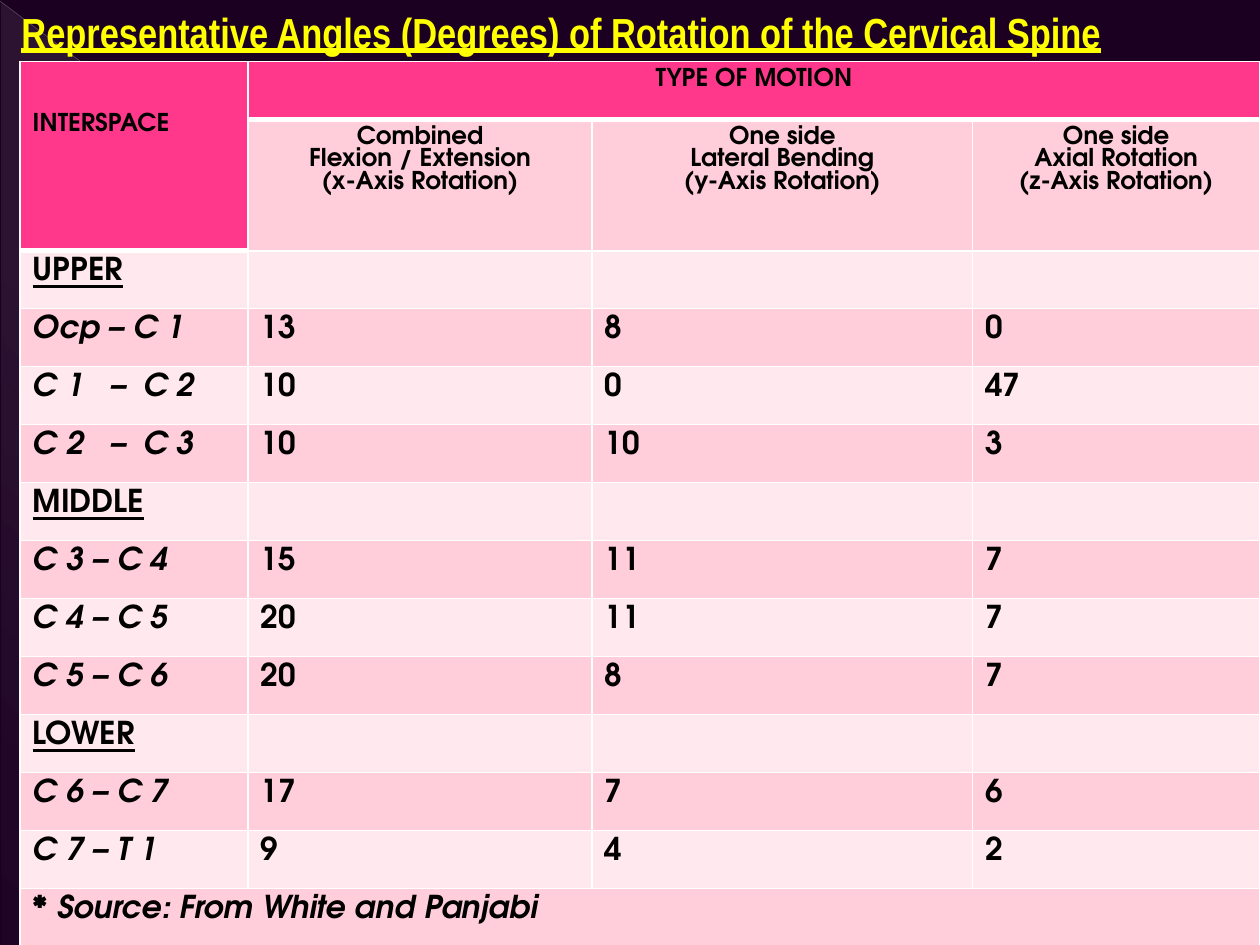
from dataclasses import dataclass

from lxml import etree
from pptx import Presentation
from pptx import util as u
from pptx.dml.color import RGBColor
from pptx.enum import shapes, text
from pptx.oxml import parse_xml
from pptx.oxml.ns import nsdecls, qn


@dataclass(frozen=True)
class Theme:
    background: str = "1C0022"
    title: str = "FFFF00"
    ink: str = "000000"
    header: str = "FF388C"
    bands: tuple = ("FFCEDA", "FFE8EE")
    border: str = "FFFFFF"
    sheen: str = "D2D2D2"
    title_font: str = "Arial Narrow"
    body_font: str = "TeX Gyre Adventor"
    title_size: int = 24
    header_size: int = 14
    body_size: int = 18


CENTER = text.PP_ALIGN.CENTER
COLUMNS = (18.1, 27.3, 30.2, 22.8)  # percent of the slide width
ROW, SUBHEAD_ROW, SOURCE_ROW = 6.14, 13.87, 8.93  # percent of the slide height
SUBHEADS = (
    ("Combined", "Flexion / Extension", "(x-Axis Rotation)"),
    ("One side", "Lateral Bending", "(y-Axis Rotation)"),
    ("One side", "Axial Rotation", "(z-Axis Rotation)"),
)
REGIONS = {
    "UPPER": (("Ocp – C 1", 13, 8, 0), ("C 1 – C 2", 10, 0, 47),
              ("C 2 – C 3", 10, 10, 3)),
    "MIDDLE": (("C 3 – C 4", 15, 11, 7), ("C 4 – C 5", 20, 11, 7),
               ("C 5 – C 6", 20, 8, 7)),
    "LOWER": (("C 6 – C 7", 17, 7, 6), ("C 7 – T 1", 9, 4, 2)),
}
WIDE_LABELS = ("C 1 – C 2", "C 2 – C 3")


def write(p, words, *, size, font, color, bold=True, italic=False,
          underline=False, align=None, tracking=0):
    """Add one formatted run to a paragraph; tracking is in points."""
    r = p.add_run()
    r.text = words
    r.font.size, r.font.name = u.Pt(size), font
    r.font.bold, r.font.italic, r.font.underline = bold, italic, underline
    r.font.color.rgb = RGBColor.from_string(color)
    if tracking:
        r._r.get_or_add_rPr().set("spc", str(tracking * 100))
    if align is not None:
        p.alignment = align


class Deck:
    def __init__(self, theme):
        self.theme = theme
        self.prs = Presentation()
        self.prs.slide_width, self.prs.slide_height = u.Inches(10), u.Inches(7.5)
        self.s = self.prs.slides.add_slide(self.prs.slide_layouts[5])
        fill = self.s.background.fill
        fill.solid()
        fill.fore_color.rgb = RGBColor.from_string(theme.background)

    def x(self, share):
        return round(self.prs.slide_width * share / 100)

    def y(self, share):
        return round(self.prs.slide_height * share / 100)

    def sheen(self, left, top, width, height, stops, angle):
        """Right triangle with a translucent gradient of (position, alpha) stops."""
        sp = self.s.shapes.add_shape(shapes.MSO_SHAPE.RIGHT_TRIANGLE, self.x(left),
                                     self.y(top), self.x(width), self.y(height))
        sp.shadow.inherit = False
        sp.line.fill.background()
        marks = "".join(
            f'<a:gs pos="{pos * 1000}"><a:srgbClr val="{self.theme.sheen}">'
            f'<a:alpha val="{alpha * 1000}"/></a:srgbClr></a:gs>'
            for pos, alpha in stops)
        geometry = sp.element.spPr.find(qn("a:prstGeom"))
        geometry.addnext(parse_xml(
            f'<a:gradFill {nsdecls("a")}><a:gsLst>{marks}</a:gsLst>'
            f'<a:lin ang="{angle * 60000}" scaled="0"/></a:gradFill>'))

    def line(self, x1, y1, x2, y2, color, width, alpha):
        c = self.s.shapes.add_connector(shapes.MSO_CONNECTOR.STRAIGHT, self.x(x1),
                                        self.y(y1), self.x(x2), self.y(y2))
        c.line.width = u.Pt(width)
        c.line.color.rgb = RGBColor.from_string(color)
        spPr = c.element.spPr
        tint = spPr.find(".//" + qn("a:srgbClr"))
        etree.SubElement(tint, qn("a:alpha")).set("val", str(alpha * 1000))
        etree.SubElement(spPr, qn("a:effectLst"))

    def title(self, words, left, top, width, height):
        t = self.theme
        sp = self.s.shapes.title
        sp.left, sp.top = self.x(left), self.y(top)
        sp.width, sp.height = self.x(width), self.y(height)
        tree = sp.element.getparent()
        tree.append(sp.element)  # in front of the backdrop
        tf = sp.text_frame
        tf.word_wrap, tf.auto_size = True, text.MSO_AUTO_SIZE.NONE
        tf.vertical_anchor = text.MSO_ANCHOR.TOP
        tf.margin_left = u.Inches(0.17)
        p = tf.paragraphs[0]
        p.space_before = u.Pt(2)
        write(p, words, size=t.title_size, font=t.title_font, color=t.title,
              underline=True, align=text.PP_ALIGN.LEFT)

    def table(self, left, top, columns, rows):
        frame = self.s.shapes.add_table(len(rows), len(columns), self.x(left),
                                        self.y(top), self.x(sum(columns)),
                                        self.y(sum(rows)))
        table = frame.table
        for column, share in zip(table.columns, columns):
            column.width = self.x(share)
        for row, share in zip(table.rows, rows):
            row.height = self.y(share)
        return table

    def fill_cell(self, cell, color, top=1, bottom=1):
        cell.fill.solid()
        cell.fill.fore_color.rgb = RGBColor.from_string(color)
        tcPr = cell._tc.get_or_add_tcPr()
        sides = {"L": 1, "R": 1, "T": top, "B": bottom}
        for i, (side, width) in enumerate(sides.items()):
            tcPr.insert(i, parse_xml(
                f'<a:ln{side} {nsdecls("a")} w="{u.Pt(width)}"><a:solidFill>'
                f'<a:srgbClr val="{self.theme.border}"/></a:solidFill></a:ln{side}>'))

    def cell_text(self, cell, *lines, **form):
        t = self.theme
        form = dict(size=t.body_size, font=t.body_font, color=t.ink) | form
        tf = cell.text_frame
        for i, words in enumerate(lines):
            p = tf.add_paragraph() if i else tf.paragraphs[0]
            if words in WIDE_LABELS:
                # widen the spaces around the dash
                start, end = words.split(" – ")
                for part, gap in ((start, 0), (" ", 10), ("–", 0), (" ", 5), (end, 0)):
                    write(p, part, tracking=gap, **form)
            else:
                write(p, words, **form)


def main():
    theme = Theme()
    deck = Deck(theme)

    # Backdrop
    deck.sheen(0.1, 0.27, 99.8, 99.73, ((0, 10), (70, 8), (100, 1)), 133)
    deck.line(0, 0.13, 99.9, 99.87, "BFBFBF", 0.39, 35)
    deck.line(100, 72.13, 70.7, 99.87, "C6C6C6", 0.47, 45)

    # Title
    deck.title("Representative Angles (Degrees) of Rotation of the Cervical Spine",
               0, 0, 100, 6.5)

    # Table rows: regions are headings, followed by their interspaces
    body = []
    for region, interspaces in REGIONS.items():
        body += [(region,), *interspaces]
    heights = [ROW, SUBHEAD_ROW] + [ROW] * len(body) + [SOURCE_ROW]
    table = deck.table(1.6, 6.53, COLUMNS, heights)
    last = len(heights) - 1

    # Fills and borders
    for r in range(len(heights)):
        for c in range(len(COLUMNS)):
            is_header = r == 0 or (r == 1 and c == 0)
            color = theme.header if is_header else theme.bands[(r + 1) % 2]
            above_is_header = (r == 1 and c > 0) or (r == 2 and c == 0)
            deck.fill_cell(table.cell(r, c), color, top=3 if above_is_header else 1,
                           bottom=3 if is_header else 1)

    # Header
    table.cell(0, 0).merge(table.cell(1, 0))
    table.cell(0, 1).merge(table.cell(0, 3))
    table.cell(0, 0).margin_top = u.Inches(0.41)
    deck.cell_text(table.cell(0, 0), "INTERSPACE", size=theme.header_size)
    deck.cell_text(table.cell(0, 1), "TYPE OF MOTION", size=theme.header_size,
                   align=CENTER)
    for c, lines in enumerate(SUBHEADS, 1):
        deck.cell_text(table.cell(1, c), *lines, size=theme.header_size, align=CENTER)

    # Angles
    for r, (label, *angles) in enumerate(body, 2):
        deck.cell_text(table.cell(r, 0), label, italic=bool(angles),
                       underline=not angles)
        for c, angle in enumerate(angles, 1):
            deck.cell_text(table.cell(r, c), str(angle))

    # Source
    table.cell(last, 0).merge(table.cell(last, 3))
    deck.cell_text(table.cell(last, 0), "* Source: From White and Panjabi", italic=True)

    deck.prs.save("out.pptx")


if __name__ == "__main__":
    main()
